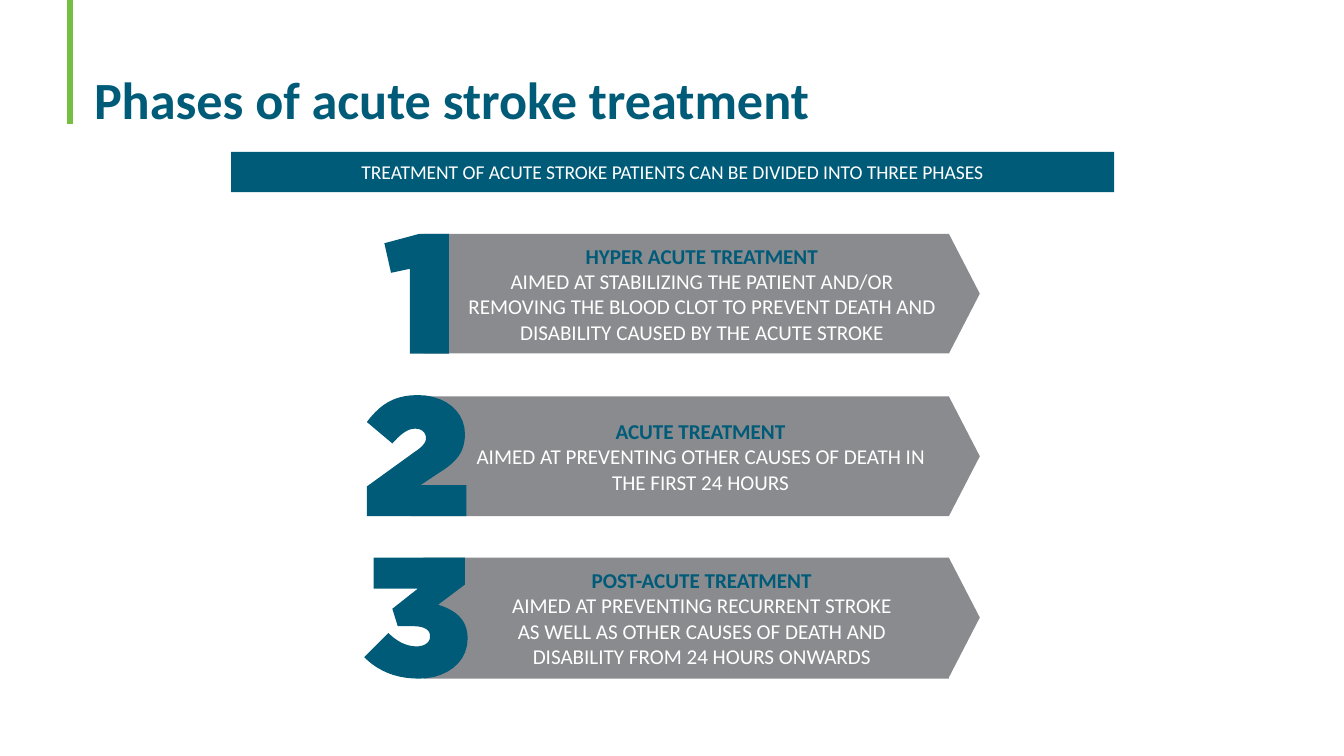
from dataclasses import dataclass
from typing import Optional

from lxml import etree
from pptx import Presentation
from pptx import util as u
from pptx.dml.color import RGBColor
from pptx.enum import shapes, text
from pptx.oxml.ns import qn

COLORS = {"teal": "005B79", "gray": "898B8E", "green": "75C043", "white": "FFFFFF"}
FONT = "Calibri"
PHASE_SIZE = 11.3
PANEL_RIGHT = 7.06
PANEL_HEIGHT = 0.89
TIP_DEPTH = 0.23
CURVE_STEPS = 10

# Each outline step is a point (x, y) or a Bézier curve (x1, y1, x2, y2, x, y).
Outline = list[tuple[float, ...]]


@dataclass
class Phase:
    top: float
    left: float
    inset: float
    heading: str
    body: str
    digit: Outline
    panel: Optional[Outline] = None


PHASES = [
    Phase(
        1.74, 3.15, 0.3, "HYPER ACUTE TREATMENT",
        "AIMED AT STABILIZING THE PATIENT AND/OR REMOVING THE BLOOD CLOT "
        "TO PREVENT DEATH AND DISABILITY CAUSED BY THE ACUTE STROKE",
        digit=[(3.05, 2), (2.91, 2.03), (2.86, 1.81), (3.12, 1.74), (3.34, 1.74),
               (3.34, 2.63), (3.05, 2.63)],
    ),
    Phase(
        2.95, 3.05, 0.38, "ACUTE TREATMENT",
        "AIMED AT PREVENTING OTHER CAUSES OF DEATH IN THE FIRST 24 HOURS",
        digit=[(2.73, 3.62), (3.09, 3.36), (3.15, 3.32, 3.17, 3.29, 3.17, 3.26),
               (3.17, 3.22, 3.14, 3.19, 3.09, 3.19), (3.04, 3.19, 2.99, 3.22, 2.92, 3.3),
               (2.73, 3.14), (2.83, 3.01, 2.93, 2.94, 3.11, 2.94),
               (3.31, 2.94, 3.46, 3.06, 3.46, 3.23), (3.46, 3.37, 3.39, 3.44, 3.28, 3.51),
               (3.13, 3.61), (3.47, 3.61), (3.47, 3.84), (2.73, 3.84)],
        panel=[(3.06, 2.95), (PANEL_RIGHT, 2.95), (PANEL_RIGHT, 3.84), (3.06, 3.84),
               (3.06, 3.68, 2.97, 3.59, 3.4, 3.36)],
    ),
    Phase(
        4.15, 3.15, 0.3, "POST-ACUTE TREATMENT",
        "AIMED AT PREVENTING RECURRENT STROKE\vAS WELL AS OTHER CAUSES OF DEATH AND\v"
        "DISABILITY FROM 24 HOURS ONWARDS",
        digit=[(2.71, 4.89), (2.89, 4.71), (2.95, 4.77, 3.02, 4.81, 3.1, 4.81),
               (3.16, 4.81, 3.2, 4.78, 3.2, 4.74), (3.2, 4.73),
               (3.2, 4.69, 3.16, 4.66, 3.08, 4.66), (2.96, 4.66), (2.92, 4.53),
               (3.11, 4.38), (2.78, 4.38), (2.78, 4.15), (3.46, 4.15), (3.46, 4.35),
               (3.26, 4.5), (3.39, 4.54, 3.48, 4.61, 3.48, 4.75),
               (3.48, 4.94, 3.31, 5.05, 3.12, 5.05), (2.94, 5.05, 2.81, 4.99, 2.71, 4.89)],
        panel=[(3.15, 4.15), (PANEL_RIGHT, 4.15), (PANEL_RIGHT, 5.05), (3.15, 5.05),
               (3.15, 4.95, 3.29, 4.84, 3.29, 4.74)],
    ),
]


def rgb(name: str) -> RGBColor:
    return RGBColor.from_string(COLORS[name])


def paint(shape, color: str):
    shape.fill.solid()
    shape.fill.fore_color.rgb = rgb(color)
    shape.line.fill.background()
    shape.shadow.inherit = False
    return shape


def add_preset(page, kind, left: float, top: float, width: float, height: float, color: str):
    box = (u.Inches(value) for value in (left, top, width, height))
    return paint(page.shapes.add_shape(kind, *box), color)


def flatten(outline: Outline) -> list[tuple[float, float]]:
    """Replace each curve by short straight segments."""
    points = [outline[0]]
    for step in outline[1:]:
        if len(step) == 2:
            points.append(step)
            continue
        controls = [points[-1], step[:2], step[2:4], step[4:]]
        for i in range(1, CURVE_STEPS + 1):
            t = i / CURVE_STEPS
            weights = ((1 - t) ** 3, 3 * t * (1 - t) ** 2, 3 * t * t * (1 - t), t ** 3)
            points.append(tuple(
                sum(w * point[axis] for w, point in zip(weights, controls)) for axis in (0, 1)
            ))
    return points


def add_outline(page, outline: Outline, color: str):
    points = [(u.Inches(x), u.Inches(y)) for x, y in flatten(outline)]
    builder = page.shapes.build_freeform(*points[0])
    builder.add_line_segments(points[1:], close=True)
    return paint(builder.convert_to_shape(), color)


def set_frame(shape, anchor, left: float = 0.07, bottom: float = 0.05):
    frame = shape.text_frame
    frame.word_wrap = True
    frame.vertical_anchor = anchor
    frame.margin_left, frame.margin_right = u.Inches(left), u.Inches(0.07)
    frame.margin_top, frame.margin_bottom = u.Inches(0.04), u.Inches(bottom)
    return frame


def write(para, wording: str, size: float, color: str, bold: bool = False,
          align=text.PP_ALIGN.CENTER) -> None:
    para.text = wording
    para.alignment = align
    para.font.name = FONT
    para.font.size = u.Pt(size)
    para.font.bold = bold
    para.font.color.rgb = rgb(color)


def add_title(page) -> None:
    start, end = u.Inches(0.52), u.Inches(0.92)
    accent = page.shapes.add_connector(shapes.MSO_CONNECTOR.STRAIGHT, start, 0, start, end)
    accent.line.color.rgb = rgb("green")
    accent.line.width = u.Pt(3)
    etree.SubElement(accent._element.spPr, qn("a:effectLst"))

    title = page.shapes.add_textbox(
        u.Inches(0.63), u.Inches(0.31), u.Inches(8.77), u.Inches(0.71))
    para = set_frame(title, text.MSO_ANCHOR.BOTTOM).paragraphs[0]
    write(para, "Phases of acute stroke treatment", 28, "teal", True, text.PP_ALIGN.LEFT)
    para.line_spacing = 0.9


def add_banner(page) -> None:
    banner = add_preset(page, shapes.MSO_SHAPE.RECTANGLE, 1.72, 1.13, 6.57, 0.3, "teal")
    para = set_frame(banner, text.MSO_ANCHOR.MIDDLE).paragraphs[0]
    write(para, "TREATMENT OF ACUTE STROKE PATIENTS CAN BE DIVIDED INTO THREE PHASES",
          10.5, "white")


def add_phase(page, phase: Phase) -> None:
    if phase.panel:
        panel = add_outline(page, phase.panel, "gray")
    else:
        panel = add_preset(page, shapes.MSO_SHAPE.RECTANGLE, phase.left, phase.top,
                           PANEL_RIGHT - phase.left, PANEL_HEIGHT, "gray")
    frame = set_frame(panel, text.MSO_ANCHOR.MIDDLE, phase.inset, 0.04)
    write(frame.paragraphs[0], phase.heading, PHASE_SIZE, "teal", True)
    write(frame.add_paragraph(), phase.body, PHASE_SIZE, "white")

    # The tip turns about its centre, so its box is placed before the turn.
    tip = add_preset(page, shapes.MSO_SHAPE.ISOSCELES_TRIANGLE,
                     PANEL_RIGHT + (TIP_DEPTH - PANEL_HEIGHT) / 2,
                     phase.top + (PANEL_HEIGHT - TIP_DEPTH) / 2,
                     PANEL_HEIGHT, TIP_DEPTH, "gray")
    tip.rotation = 90
    add_outline(page, phase.digit, "teal")


def main() -> None:
    deck = Presentation()
    deck.slide_width = u.Inches(10)
    deck.slide_height = deck.slide_width * 9 // 16
    page = deck.slides.add_slide(deck.slide_layouts[6])
    add_title(page)
    for phase in PHASES:
        add_phase(page, phase)
    add_banner(page)
    deck.save("out.pptx")


if __name__ == "__main__":
    main()
